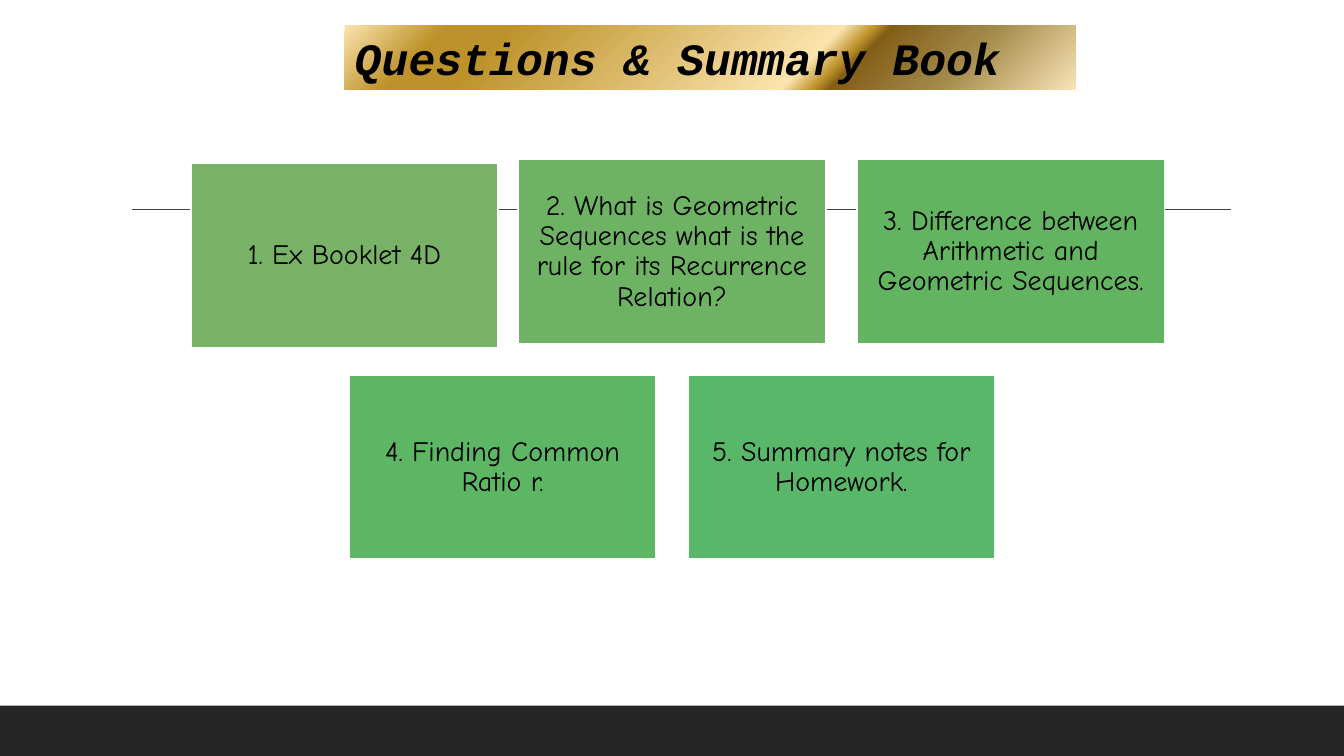
from dataclasses import dataclass

from lxml.etree import SubElement
from pptx import Presentation
from pptx.dml.color import RGBColor
from pptx.enum.shapes import MSO_CONNECTOR as Connector, MSO_SHAPE as Shape
from pptx.enum.text import MSO_ANCHOR as Anchor, MSO_AUTO_SIZE as AutoSize, PP_ALIGN as Align
from pptx.oxml.ns import qn
from pptx.util import Pt


@dataclass(frozen=True)
class Theme:
    """Colours, fonts and sizes of the slide."""
    ink: str = "000000"
    paper: str = "FFFFFF"
    footer: str = "262626"
    rule: str = "404040"
    greens: tuple = ("78B266", "6DB363", "62B460", "5CB663", "59B76A")
    gold: tuple = ((0, "FBE4AE"), (13, "BD922A"), (21, "BD922A"), (63, "FBE4AE"),
                   (67, "BD922A"), (69, "835E17"), (82, "A28949"), (100, "FAE3B7"))
    heading_font: str = "Courier New"
    heading_size: int = 32
    topic_font: str = "Comic Neue"
    topic_size: int = 20


THEME = Theme()
WIDTH, HEIGHT = 960, 540
TOPICS = (
    "1. Ex Booklet 4D",
    "2. What is Geometric Sequences what is the rule for its Recurrence Relation?",
    "3. Difference between Arithmetic and Geometric Sequences.",
    "4. Finding Common Ratio r.",
    "5. Summary notes for Homework.",
)


def write(paragraph, words, font, size, bold=False, italic=False):
    """Add one styled run to a paragraph."""
    run = paragraph.add_run()
    run.text = words
    run.font.name = font
    run.font.size = Pt(size)
    run.font.bold = bold
    run.font.italic = italic
    run.font.color.rgb = RGBColor.from_string(THEME.ink)


def add_block(slide, left, top, width, height, colour):
    """Add a flat rectangle without an outline."""
    block = slide.shapes.add_shape(Shape.RECTANGLE, Pt(left), Pt(top), Pt(width), Pt(height))
    block.shadow.inherit = False
    block.fill.solid()
    block.fill.fore_color.rgb = RGBColor.from_string(colour)
    block.line.fill.background()
    return block


def add_backdrop(slide, width, height):
    """Draw the dark footer and the thin rule across the slide."""
    footer_height = 36
    add_block(slide, 0, height - footer_height, width, footer_height, THEME.footer)
    rule_y = 149.8
    rule = slide.shapes.add_connector(Connector.STRAIGHT, Pt(94.3), Pt(rule_y), Pt(879.1), Pt(rule_y))
    rule.line.color.rgb = RGBColor.from_string(THEME.rule)
    rule.line.width = Pt(1)
    SubElement(rule._element.spPr, qn("a:effectLst"))


def add_heading(slide, left, top, width, height):
    """Place the title on its golden gradient band."""
    heading = slide.shapes.title
    heading.left, heading.top, heading.width, heading.height = map(Pt, (left, top, width, height))
    heading.fill.gradient()
    heading.fill.gradient_angle = 315
    stops = heading._element.spPr.find(".//" + qn("a:gsLst"))
    stops.clear()
    for percent, colour in THEME.gold:
        stop = SubElement(stops, qn("a:gs"), pos=str(percent * 1000))
        SubElement(stop, qn("a:srgbClr"), val=colour)
    frame = heading.text_frame
    frame.auto_size = AutoSize.NONE
    frame.vertical_anchor = Anchor.TOP
    paragraph = frame.paragraphs[0]
    paragraph.alignment = Align.JUSTIFY
    write(paragraph, "Questions & Summary Book", THEME.heading_font, THEME.heading_size,
          bold=True, italic=True)


def add_topic(slide, left, top, width, height, words, colour):
    """Draw one green tile with its centred topic."""
    tile = add_block(slide, left, top, width, height, colour)
    tile.line.color.rgb = RGBColor.from_string(THEME.paper)
    tile.line.width = Pt(1.25)
    frame = tile.text_frame
    frame.word_wrap = True
    frame.vertical_anchor = Anchor.MIDDLE
    frame.margin_left = frame.margin_right = frame.margin_top = frame.margin_bottom = Pt(6)
    paragraph = frame.paragraphs[0]
    paragraph.alignment = Align.CENTER
    paragraph.line_spacing = 0.9
    write(paragraph, words, THEME.topic_font, THEME.topic_size)


def add_topics(slide, left, top, width):
    """Lay the topics out in centred rows, the first tile slightly shifted."""
    tile_width, tile_height, gap, columns = 219.6, 131.8, 22.2, 3
    pitch = (width - tile_width) / (columns - 1)
    for index, (words, colour) in enumerate(zip(TOPICS, THEME.greens)):
        row, column = divmod(index, columns)
        in_row = min(columns, len(TOPICS) - row * columns)
        x = left + (columns - in_row) * pitch / 2 + column * pitch
        y = top + row * (tile_height + gap)
        shift_x, shift_y = (8, 3) if index == 0 else (0, 0)
        add_topic(slide, x + shift_x, y + shift_y, tile_width, tile_height, words, colour)


def main():
    """Build and save the slide."""
    deck = Presentation()
    deck.slide_width, deck.slide_height = Pt(WIDTH), Pt(HEIGHT)
    slide = deck.slides.add_slide(deck.slide_layouts[5])
    add_backdrop(slide, WIDTH, HEIGHT)
    add_heading(slide, 246.2, 18, 522, 46.1)
    add_topics(slide, 128.2, 113.8, 703.6)
    deck.save("out.pptx")


if __name__ == "__main__":
    main()
